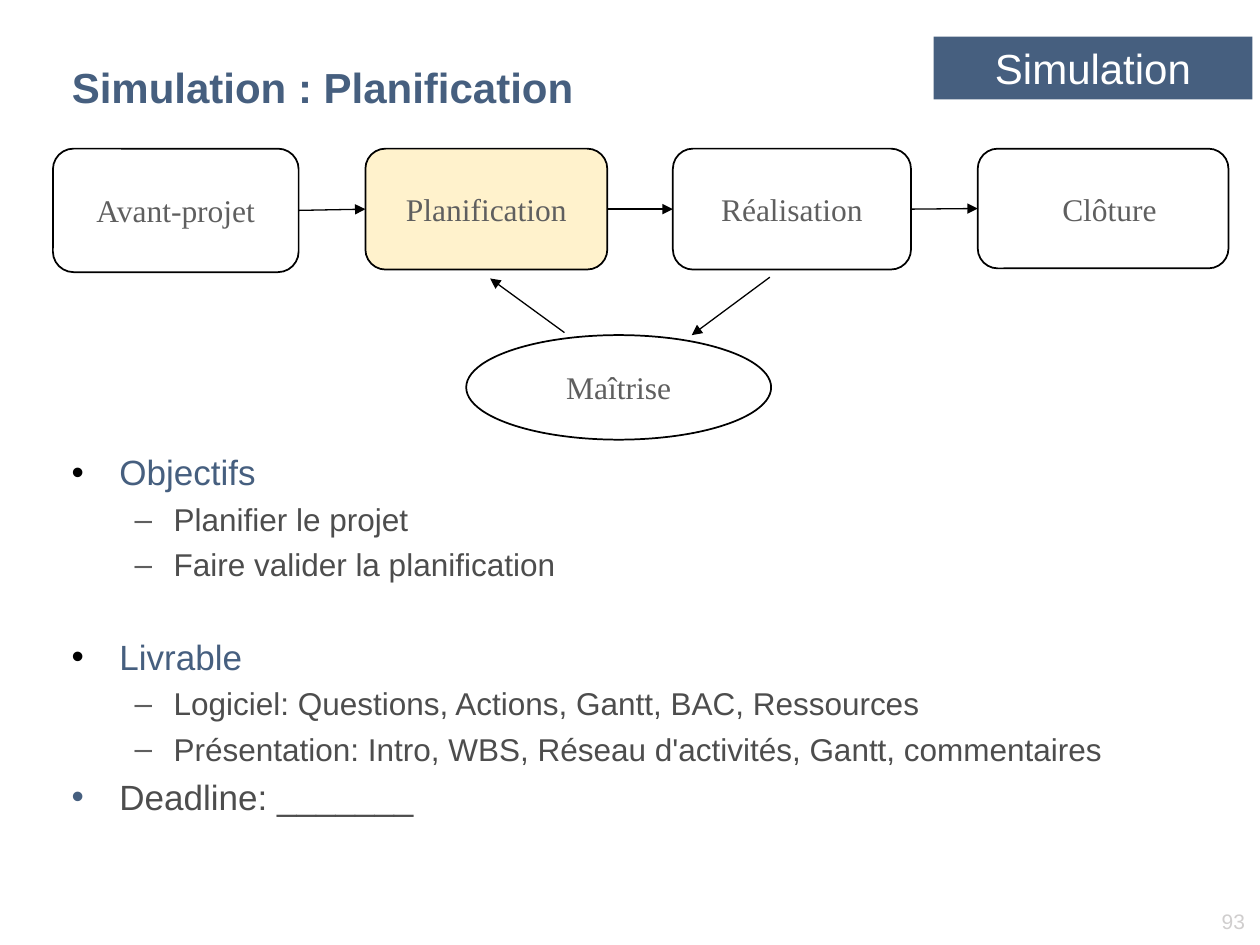
from dataclasses import dataclass
from itertools import pairwise

from lxml import etree
from pptx import Presentation
from pptx import util as u
from pptx.dml.color import RGBColor
from pptx.enum import shapes, text
from pptx.oxml.ns import qn

NAVY = RGBColor(0x46, 0x5F, 0x7F)
GREY = RGBColor(0x5F, 0x5F, 0x5F)
DARK = RGBColor(0x4D, 0x4D, 0x4D)
PALE = RGBColor(0xD0, 0xCE, 0xCE)
CREAM = RGBColor(0xFF, 0xF2, 0xCC)
BLACK = RGBColor(0, 0, 0)
WHITE = RGBColor(0xFF, 0xFF, 0xFF)
SANS, SERIF = "Arial", "Times New Roman"

WIDTH, HEIGHT = u.Inches(10), u.Inches(7.5)
COLUMN, ROW = WIDTH / 100, HEIGHT / 75
LEFT_SITE, RIGHT_SITE = 1, 3


@dataclass(frozen=True)
class Area:
    col: float
    row: float
    cols: float
    rows: float

    def box(self) -> tuple[int, ...]:
        return (int(self.col * COLUMN), int(self.row * ROW),
                int(self.cols * COLUMN), int(self.rows * ROW))


@dataclass(frozen=True)
class Style:
    size: float
    color: RGBColor
    font: str = SANS
    bold: bool = False


@dataclass(frozen=True)
class Step:
    label: str
    area: Area
    fill: RGBColor | None = None
    shift: float = 0


@dataclass(frozen=True)
class Level:
    bullet: str
    margin: float
    hang: float
    size: float
    before: float


@dataclass(frozen=True)
class Item:
    words: str
    level: Level
    color: RGBColor
    bullet_color: RGBColor
    gap: float = 0


MAIN = Level("•", 0.38, 0.38, 20, 4.6)
SUB = Level("–", 0.81, 0.31, 18, 4.2)
STEP_STYLE = Style(18, GREY, SERIF)

PHASES = [
    Step("Avant-projet", Area(4.2, 11.8, 19.5, 9.8)),
    Step("Planification", Area(29, 11.8, 19.2, 9.6), CREAM),
    Step("Réalisation", Area(53.4, 11.8, 18.9, 9.6)),
    Step("Clôture", Area(77.6, 11.8, 19.9, 9.5), shift=0.1),
]
CONTROL = Step("Maîtrise", Area(37, 26.6, 24.2, 8.3))
CONTROL_LOOP = [((61.1, 22), (54.9, 26.6)), ((44.8, 26.4), (38.9, 22.1))]

ITEMS = [
    Item("Objectifs", MAIN, NAVY, BLACK),
    Item("Planifier le projet", SUB, DARK, GREY),
    Item("Faire valider la planification", SUB, DARK, GREY),
    Item("Livrable", MAIN, NAVY, BLACK, gap=25),
    Item("Logiciel: Questions, Actions, Gantt, BAC, Ressources", SUB, DARK, GREY),
    Item("Présentation: Intro, WBS, Réseau d'activités, Gantt, commentaires",
         SUB, DARK, GREY),
    Item("Deadline: _______", MAIN, DARK, NAVY),
]


def style_runs(paragraph, style: Style) -> None:
    for run in paragraph.runs:
        run.font.size = u.Pt(style.size)
        run.font.name = style.font
        run.font.bold = style.bold
        run.font.color.rgb = style.color


def write(shape, words: str, style: Style, align, wrap: bool = True) -> None:
    frame = shape.text_frame
    frame.text = words
    frame.word_wrap = wrap
    frame.auto_size = text.MSO_AUTO_SIZE.NONE
    frame.vertical_anchor = text.MSO_ANCHOR.MIDDLE
    frame.paragraphs[0].alignment = align
    style_runs(frame.paragraphs[0], style)


def add_figure(slide, preset, area: Area, fill: RGBColor | None, line: RGBColor | None):
    figure = slide.shapes.add_shape(preset, *area.box())
    figure.shadow.inherit = False
    if fill is None:
        figure.fill.background()
    else:
        figure.fill.solid()
        figure.fill.fore_color.rgb = fill
    if line is None:
        figure.line.fill.background()
    else:
        figure.line.color.rgb = line
        figure.line.width = u.Pt(1)
    return figure


def add_step(slide, preset, step: Step):
    figure = add_figure(slide, preset, step.area, step.fill, BLACK)
    write(figure, step.label, STEP_STYLE, text.PP_ALIGN.CENTER, wrap=False)
    figure.text_frame.margin_left = u.Inches(0.1 + step.shift)
    return figure


def add_arrow(slide, start=(0, 0), end=(0, 0)):
    arrow = slide.shapes.add_connector(
        shapes.MSO_CONNECTOR.STRAIGHT,
        int(start[0] * COLUMN), int(start[1] * ROW),
        int(end[0] * COLUMN), int(end[1] * ROW))
    arrow.line.color.rgb = BLACK
    arrow.line.width = u.Pt(0.75)
    etree.SubElement(arrow.line._get_or_add_ln(), qn("a:tailEnd"), type="triangle")
    etree.SubElement(arrow._element.spPr, qn("a:effectLst"))
    return arrow


def add_item(paragraph, item: Item) -> None:
    level = item.level
    paragraph.text = item.words
    paragraph.space_before = u.Pt(level.before + item.gap)
    style_runs(paragraph, Style(level.size, item.color))
    properties = paragraph._p.get_or_add_pPr()
    properties.set("marL", str(u.Inches(level.margin)))
    properties.set("indent", str(-u.Inches(level.hang)))
    bullet_color = etree.SubElement(properties, qn("a:buClr"))
    etree.SubElement(bullet_color, qn("a:srgbClr"), val=str(item.bullet_color))
    etree.SubElement(properties, qn("a:buFont"), typeface=SANS)
    etree.SubElement(properties, qn("a:buChar"), char=level.bullet)


def add_outline(slide, area: Area, items: list[Item]) -> None:
    frame = slide.shapes.add_textbox(*area.box()).text_frame
    frame.word_wrap = True
    for index, item in enumerate(items):
        add_item(frame.add_paragraph() if index else frame.paragraphs[0], item)


def main() -> None:
    deck = Presentation()
    deck.slide_width, deck.slide_height = WIDTH, HEIGHT
    slide = deck.slides.add_slide(deck.slide_layouts.get_by_name("Title Only"))

    page_number = slide.shapes.add_textbox(*Area(91.6, 71.6, 8.2, 3).box())
    write(page_number, "93", Style(12, PALE), text.PP_ALIGN.RIGHT)
    badge = add_figure(slide, shapes.MSO_SHAPE.RECTANGLE,
                       Area(74.1, 2.9, 25.3, 5), NAVY, None)
    write(badge, "Simulation", Style(24, WHITE), text.PP_ALIGN.CENTER)

    title = slide.shapes.title
    title.left, title.top, title.width, title.height = Area(4.7, 4.1, 84.7, 5.6).box()
    write(title, "Simulation : Planification", Style(24, NAVY, bold=True),
          text.PP_ALIGN.LEFT)

    add_outline(slide, Area(4.7, 35.3, 84.7, 29.2), ITEMS)

    add_step(slide, shapes.MSO_SHAPE.OVAL, CONTROL)
    phases = [add_step(slide, shapes.MSO_SHAPE.ROUNDED_RECTANGLE, phase)
              for phase in PHASES]
    for before, after in pairwise(phases):
        arrow = add_arrow(slide)
        arrow.begin_connect(before, RIGHT_SITE)
        arrow.end_connect(after, LEFT_SITE)
    for start, end in CONTROL_LOOP:
        add_arrow(slide, start, end)

    deck.save("out.pptx")


if __name__ == "__main__":
    main()
